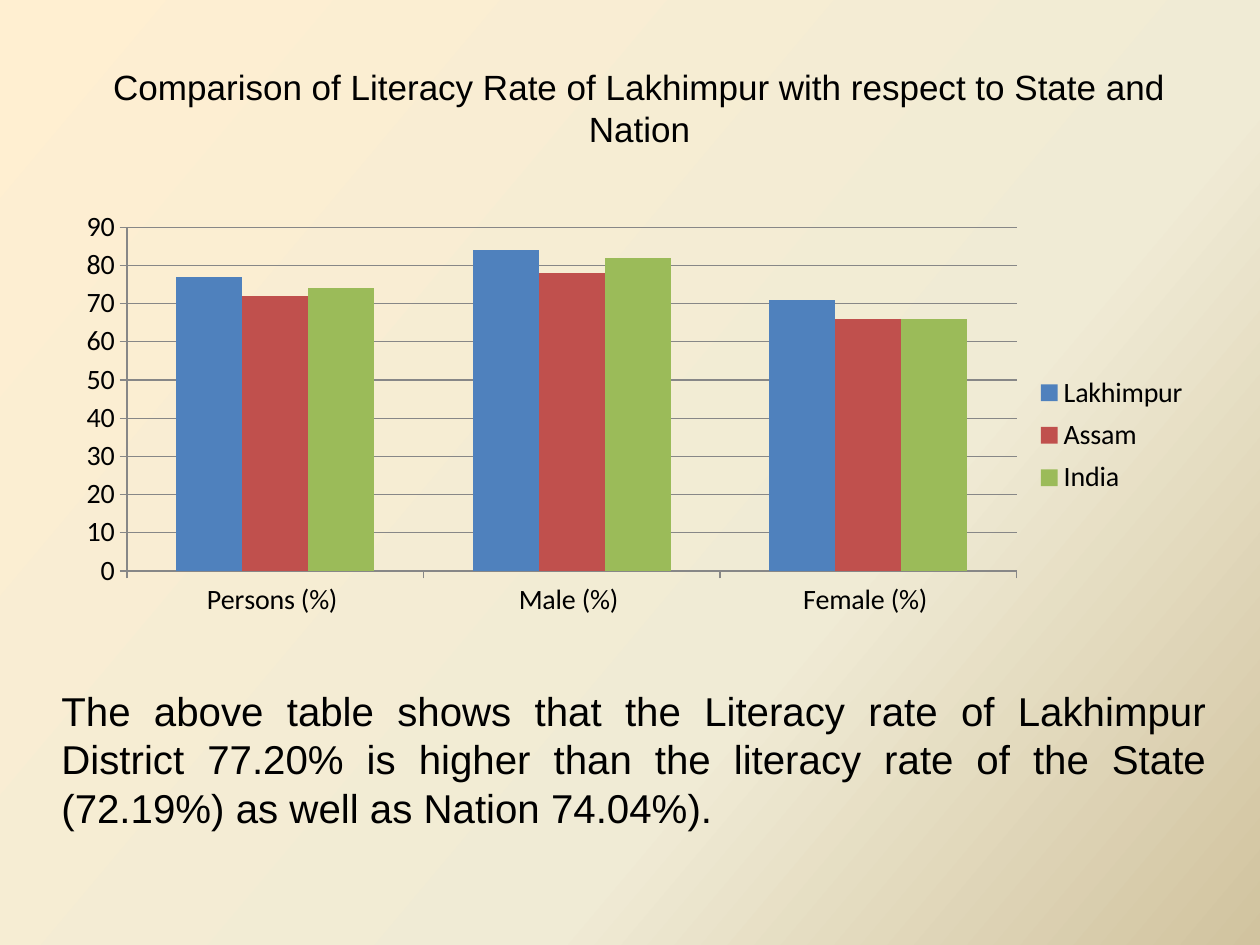
from copy import deepcopy

from lxml import etree
from pptx import Presentation
from pptx.chart.data import CategoryChartData
from pptx.dml.color import RGBColor
from pptx.enum.chart import XL_CHART_TYPE, XL_LEGEND_POSITION, XL_TICK_MARK
from pptx.enum.text import MSO_ANCHOR, PP_ALIGN
from pptx.oxml.ns import qn
from pptx.util import Pt

CLUSTERED = XL_CHART_TYPE.COLUMN_CLUSTERED
LEGEND_RIGHT = XL_LEGEND_POSITION.RIGHT
TICK_OUTSIDE = XL_TICK_MARK.OUTSIDE
TOP, MIDDLE = MSO_ANCHOR.TOP, MSO_ANCHOR.MIDDLE
CENTER, JUSTIFY = PP_ALIGN.CENTER, PP_ALIGN.JUSTIFY

BLACK = RGBColor(0x00, 0x00, 0x00)
GRAY = RGBColor(0x87, 0x87, 0x87)
BLUE = RGBColor(0x4F, 0x81, 0xBD)
RED = RGBColor(0xC0, 0x50, 0x4D)
GREEN = RGBColor(0x9B, 0xBB, 0x59)
CREAM = RGBColor(0xFF, 0xEF, 0xD1)
IVORY = RGBColor(0xF0, 0xEB, 0xD5)
TAN = RGBColor(0xD1, 0xC3, 0x9F)

BACKGROUND_STOPS = [(0, CREAM), (0.65, IVORY), (1, TAN)]
CATEGORIES = ["Persons (%) ", "Male (%) ", "Female (%) "]
LITERACY = [
    ("Lakhimpur ", BLUE, (77, 84, 71)),
    ("Assam ", RED, (72, 78, 66)),
    ("India ", GREEN, (74, 82, 66)),
]
CHART_FONT = {"name": "Calibri", "size": Pt(16)}

# Fractions of the chart
PLOT_AREA = {"layoutTarget": "inner", "xMode": "edge", "yMode": "edge",
             "x": 0.05, "y": 0.09, "w": 0.77, "h": 0.76}
LEGEND_AREA = {"xMode": "edge", "yMode": "edge", "x": 0.83, "y": 0.4, "w": 0.15, "h": 0.3}

# Left, top, width, height in points
TITLE_BOX = (50.4, 33.8, 630, 55.4)
CHART_BOX = (39.6, 106.6, 660.2, 258.5)
SUMMARY_BOX = (28, 388.2, 669.6, 90.7)


def set_attributes(target, values):
    for name, value in values.items():
        setattr(target, name, value)


def paint_background(page):
    fill = page.background.fill
    fill.gradient()
    fill.gradient_angle = 320
    stop_list = next(page.element.iter(qn("a:gsLst")))
    stop_list.append(deepcopy(stop_list[-1]))
    for stop, (position, color) in zip(fill.gradient_stops, BACKGROUND_STOPS):
        stop.position = position
        stop.color.rgb = color


def add_text(page, box, text, size, alignment, anchor):
    frame = page.shapes.add_textbox(*map(Pt, box)).text_frame
    set_attributes(frame, {"word_wrap": True, "vertical_anchor": anchor})
    para = frame.paragraphs[0]
    para.alignment = alignment
    span = para.add_run()
    span.text = text
    set_attributes(span.font, {"name": "Arial", "size": Pt(size)})
    span.font.color.rgb = BLACK


def place_part(chart, tag, index, settings):
    """Give a chart part a manual layout, inserted as child number index."""
    part = next(chart.element.iter(qn(tag)))
    for old in part.findall(qn("c:layout")):
        part.remove(old)
    layout = etree.Element(qn("c:layout"))
    part.insert(index, layout)
    manual = etree.SubElement(layout, qn("c:manualLayout"))
    for name, value in settings.items():
        etree.SubElement(manual, qn(f"c:{name}"), val=str(value))


def add_literacy_chart(page, box):
    data = CategoryChartData()
    data.categories = CATEGORIES
    for name, _, values in LITERACY:
        data.add_series(name, values)
    chart = page.shapes.add_chart(CLUSTERED, *map(Pt, box), data).chart
    set_attributes(chart, {"has_title": False, "has_legend": True})
    set_attributes(chart.font, CHART_FONT)
    chart.font.color.rgb = BLACK
    set_attributes(chart.legend, {"position": LEGEND_RIGHT, "include_in_layout": False})
    set_attributes(chart.legend.font, CHART_FONT)

    set_attributes(chart.plots[0], {"gap_width": 150, "overlap": 0, "vary_by_categories": False})
    for series, (_, color, _) in zip(chart.plots[0].series, LITERACY):
        series.format.fill.solid()
        series.format.fill.fore_color.rgb = color

    values_axis = chart.value_axis
    set_attributes(values_axis, {"minimum_scale": 0, "maximum_scale": 90, "major_unit": 10,
                                 "has_major_gridlines": True})
    for axis in (chart.category_axis, values_axis):
        axis.major_tick_mark = TICK_OUTSIDE
        set_attributes(axis.tick_labels.font, CHART_FONT)
    for part in (chart.category_axis, values_axis, values_axis.major_gridlines):
        part.format.line.width = Pt(0.75)
        part.format.line.color.rgb = GRAY
    place_part(chart, "c:plotArea", 0, PLOT_AREA)
    place_part(chart, "c:legend", 1, LEGEND_AREA)


def main():
    deck = Presentation()
    set_attributes(deck, {"slide_width": Pt(720), "slide_height": Pt(540)})
    page = deck.slides.add_slide(deck.slide_layouts[6])
    paint_background(page)
    add_literacy_chart(page, CHART_BOX)
    add_text(page, SUMMARY_BOX,
             "The above table shows that the Literacy rate of Lakhimpur District 77.20% is higher "
             "than the literacy rate of the State (72.19%) as well as Nation 74.04%).",
             23, JUSTIFY, MIDDLE)
    add_text(page, TITLE_BOX,
             "Comparison of Literacy Rate of Lakhimpur with respect to State and Nation",
             20, CENTER, TOP)
    deck.save("out.pptx")


if __name__ == "__main__":
    main()
